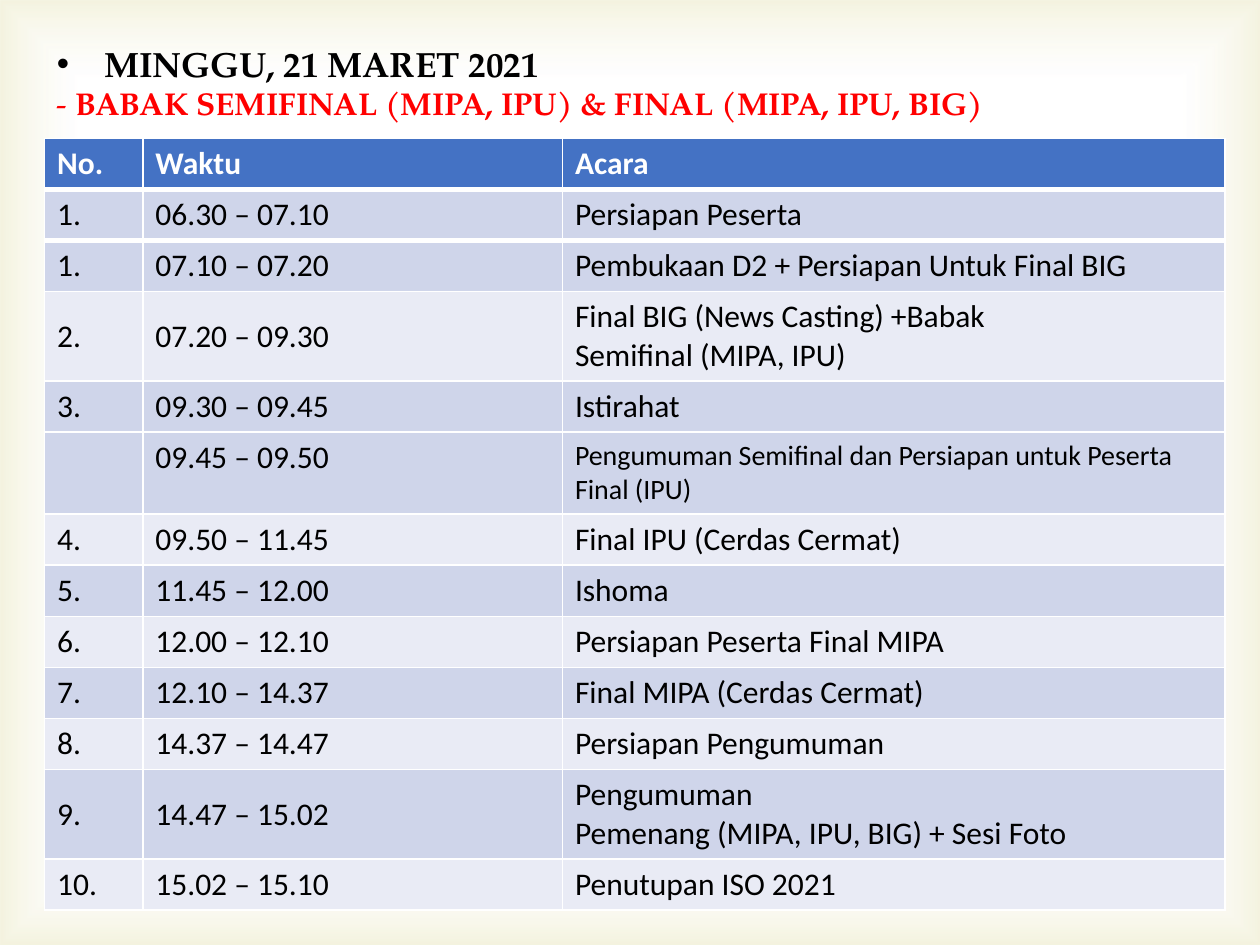
from lxml.etree import SubElement as Sub
from pptx import Presentation
from pptx.dml.color import RGBColor
from pptx.enum.shapes import MSO_SHAPE as Shape
from pptx.enum.text import MSO_ANCHOR as Anchor
from pptx.oxml import parse_xml
from pptx.oxml.ns import qn
from pptx.util import Inches, Pt

NS = "http://schemas.openxmlformats.org/drawingml/2006/main"
COLS, ROWS = 200, 150
LEFT, WIDE = 7.08, 187.4

HEAD = ("No.", "Waktu", "Acara")
PLAN = [
    (1, "06.30 – 07.10", "Persiapan~Peserta"),
    (1, "07.10~– 07.20", "Pembukaan~D2 + Persiapan Untuk Final~BIG"),
    (2, "07.20 – 09.30", "Final BIG (News Casting)~+Babak Semifinal~(MIPA,~IPU)"),
    (3, "09.30~– 09.45", "Istirahat"),
    ("", "09.45~– 09.50", "Pengumuman Semifinal dan Persiapan~untuk~Peserta Final~(IPU)"),
    (4, "09.50~– 11.45", "Final~IPU (Cerdas~Cermat)"),
    (5, "11.45~– 12.00", "Ishoma"),
    (6, "12.00~– 12.10", "Persiapan~Peserta Final~MIPA"),
    (7, "12.10~– 14.37", "Final MIPA (Cerdas~Cermat)"),
    (8, "14.37~– 14.47", "Persiapan~Pengumuman"),
    (9, "14.47~– 15.02", "Pengumuman Pemenang~(MIPA,~IPU,~BIG)~+~Sesi~Foto"),
    (10, "15.02~– 15.10", "Penutupan~ISO 2021"),
]
PALE = (2, 5, 7, 9, 11)
TALL = {2: 14, 4: 13, 10: 14}
NOTE = 4


def rgb(code):
    return RGBColor.from_string(code)


def hard(text):
    return text.replace("~", chr(160))


class Deck:
    body, serif = "Calibri", "TeX Gyre Pagella"
    blue, band, pale = "4472C4", "CFD5EA", "E9EBF5"
    white, black, red = "FFFFFF", "000000", "FF0000"

    def __init__(self, wide, high):
        self.prs = Presentation()
        self.prs.slide_width, self.prs.slide_height = Inches(wide), Inches(high)
        self.slide = self.prs.slides.add_slide(self.prs.slide_layouts[6])

    def x(self, n):
        return round(self.prs.slide_width * n / COLS)

    def y(self, n):
        return round(self.prs.slide_height * n / ROWS)

    def box(self, x, y, w, h):
        return self.x(x), self.y(y), self.x(w), self.y(h)

    def font(self, font, name, size, color, bold):
        font.name, font.size, font.bold = name, Pt(size), bold
        font.color.rgb = rgb(color)

    def mark(self, para, face, kind, **keys):
        props = para._p.get_or_add_pPr()
        props.set("marL", str(self.x(7.5)))
        props.set("indent", str(-self.x(7.5)))
        Sub(props, qn("a:buFont")).set("typeface", face)
        Sub(props, qn(kind), **keys)

    def glow(self, stops):
        rect = self.slide.shapes.add_shape(Shape.RECTANGLE, *self.box(0, 0, COLS, ROWS))
        rect.shadow.inherit = False
        rect.line.fill.background()
        marks = "".join(
            f'<a:gs pos="{at * 1000}"><a:srgbClr val="{color}">'
            f'<a:alpha val="{alpha * 1000}"/></a:srgbClr></a:gs>'
            for at, color, alpha in stops
        )
        grad = parse_xml(
            f'<a:gradFill xmlns:a="{NS}" rotWithShape="1"><a:gsLst>{marks}</a:gsLst>'
            '<a:path path="rect"><a:fillToRect l="50000" t="50000" r="50000" b="50000"/>'
            "</a:path></a:gradFill>"
        )
        rect._element.spPr.find(qn("a:prstGeom")).addnext(grad)

    def title(self, spot, lines):
        frame = self.slide.shapes.add_textbox(*self.box(*spot)).text_frame
        frame.word_wrap = True
        for i, (dot, runs) in enumerate(lines):
            para = frame.add_paragraph() if i else frame.paragraphs[0]
            if dot:
                self.mark(para, "Arial", "a:buChar", char="•")
            for text, size, color, bold in runs:
                run = para.add_run()
                run.text = hard(text)
                self.font(run.font, self.serif, size, color, bold)

    def edge(self, cell, top, base):
        props = cell._tc.get_or_add_tcPr()
        for side, width in (("L", 1), ("R", 1), ("T", top), ("B", base)):
            line = Sub(props, qn(f"a:ln{side}"), w=str(Pt(width)))
            Sub(Sub(line, qn("a:solidFill")), qn("a:srgbClr")).set("val", self.white)

    def cell(self, cell, text, fill, size, color, bold, top, base):
        self.edge(cell, top, base)
        cell.fill.solid()
        cell.fill.fore_color.rgb = rgb(fill)
        cell.vertical_anchor = Anchor.MIDDLE
        count = isinstance(text, int)
        cell.text = hard("~" if count else text)
        para = cell.text_frame.paragraphs[0]
        self.font(para.font, self.body, size, color, bold)
        if count:
            self.mark(para, self.body, "a:buAutoNum", type="arabicPeriod", startAt=str(text))

    def table(self, x, y, cols, head, plan):
        tall = [8] + [TALL.get(i, 8) for i in range(len(plan))]
        spot = self.box(x, y, sum(cols), sum(tall))
        grid = self.slide.shapes.add_table(len(tall), len(cols), *spot).table
        for col, n in zip(grid.columns, cols):
            col.width = self.x(n)
        for row, n in zip(grid.rows, tall):
            row.height = self.y(n)
        for c, text in enumerate(head):
            self.cell(grid.cell(0, c), text, self.blue, 18, self.white, True, 1, 3)
        for r, row in enumerate(plan):
            fill = self.pale if r in PALE else self.band
            top, base = 3 if r < 2 else 1, 3 if r < 1 else 1
            for c, text in enumerate(row):
                size = 16 if (r, c) == (NOTE, 2) else 18
                self.cell(grid.cell(r + 1, c), text, fill, size, self.black, False, top, base)
        grid.cell(NOTE + 1, 1).vertical_anchor = Anchor.TOP


def main():
    deck = Deck(10, 7.5)
    deck.glow([(83, "FFFFFF", 11), (100, "D1CA75", 23)])
    deck.table(LEFT, 21.95, (15.6, 66.6, 105.2), HEAD, PLAN)
    final = "BABAK SEMIFINAL (MIPA,~IPU) & FINAL (MIPA,~IPU,~BIG)"
    deck.title((LEFT, 5.75, WIDE, 14.8), [
        (True, [("MINGGU,~21 MARET 2021", 20, deck.black, True)]),
        (False, [("- ", 18, deck.red, False), (final, 18, deck.red, True)]),
    ])
    deck.prs.save("out.pptx")


if __name__ == "__main__":
    main()
